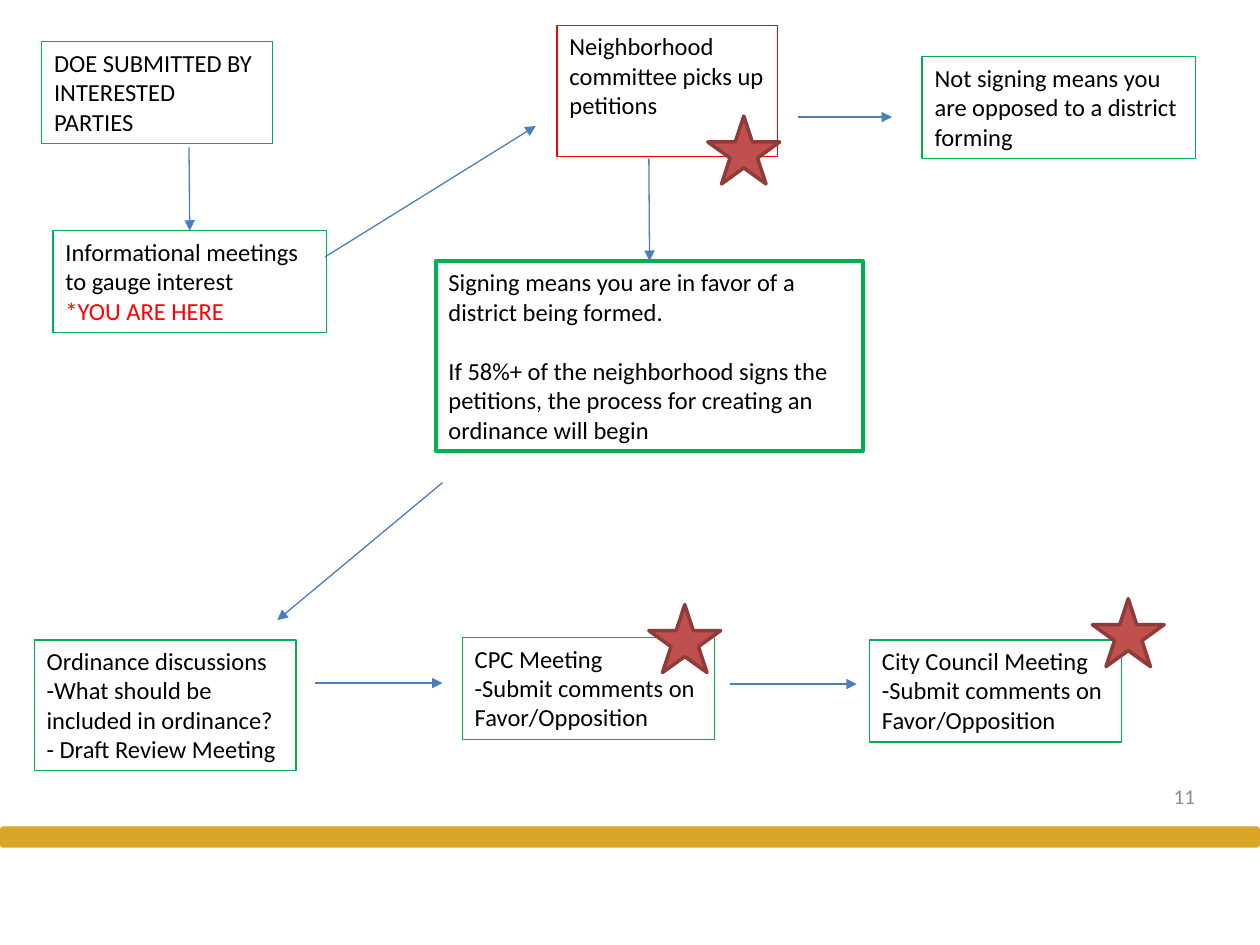
"""Build the slide showing how a neighborhood district is formed."""
from pptx import Presentation
from pptx.dml.color import RGBColor
from pptx.enum.shapes import MSO_CONNECTOR, MSO_SHAPE
from pptx.enum.text import MSO_ANCHOR, PP_ALIGN
from pptx.oxml.ns import qn
from pptx.util import Cm, Pt
from lxml.etree import SubElement

COLORS = {
    "green": "00B050", "red": "FF0000", "blue": "4B7EBC", "gold": "DAA627",
    "star": "C0504D", "star_edge": "8E3B39", "black": "000000", "gray": "8C8C8C",
}
BODY = {"name": "Calibri", "size": Pt(14)}
SMALL = {"name": "Calibri", "size": Pt(12)}
THREE_LINES, FOUR_LINES = 2.06, 2.64
STAR_SIZE = (1.45, 1.37)

BOXES = {
    "submitted": ((0.84, 0.84, 4.65, THREE_LINES), "green", 0.75,
                  [("DOE SUBMITTED BY INTERESTED PARTIES", {})]),
    "informational": ((1.07, 4.65, 5.51, THREE_LINES), "green", 0.75,
                      [("Informational meetings to gauge interest", {}),
                       ("*YOU ARE HERE", {"color": "red"})]),
    "committee": ((11.23, 0.51, 4.45, FOUR_LINES), "red", 0.75,
                  [("Neighborhood committee picks up petitions", {})]),
    "not_signing": ((18.59, 1.14, 5.51, THREE_LINES), "green", 0.75,
                    [("Not signing means you are opposed to a district forming", {})]),
    "signing": ((8.79, 5.26, 8.61, 3.84), "green", 2.25,
                [("Signing means you are in favor of a district being formed.", {}),
                 ("If 58%+ of the neighborhood signs the petitions, the process for "
                  "creating an ordinance will begin", {"space_before": 17})]),
    "ordinance": ((0.69, 12.9, 5.28, FOUR_LINES), "green", 0.75,
                  [("Ordinance discussions", {}),
                   ("-What should be included in ordinance?", {}),
                   ("- Draft Review Meeting", {})]),
    "commission": ((9.32, 12.85, 5.08, THREE_LINES), "green", 0.75,
                   [("CPC Meeting", {}),
                    ("-Submit comments on Favor/Opposition", {})]),
    "council": ((17.53, 12.9, 5.08, THREE_LINES), "green", 0.75,
                [("City Council Meeting", {}),
                 ("-Submit comments on Favor/Opposition", {})]),
}
ARROWS = [
    ((3.81, 2.97), (3.81, 4.65), "informational"),
    ((6.55, 5.18), (10.8, 2.54), None),
    ((13.08, 3.2), (13.13, 5.26), "signing"),
    ((16.08, 2.36), (17.98, 2.36), None),
    ((8.92, 9.73), (5.59, 12.5), None),
    ((6.35, 13.77), (8.92, 13.77), None),
    ((14.71, 13.79), (17.27, 13.79), None),
]
STARS = [(14.27, 2.34), (22.02, 12.07), (13.08, 12.19)]


def color(name):
    """Return the named color."""
    return RGBColor.from_string(COLORS[name])


def apply_format(target, values):
    """Set each attribute of the target from a dict."""
    for attribute, value in values.items():
        setattr(target, attribute, value)


def set_line(shape, color_name, width):
    """Give a shape or connector a solid line."""
    shape.line.color.rgb = color(color_name)
    shape.line.width = Pt(width)


def add_text(slide, bounds, paragraphs, font=BODY, text_color="black",
             alignment=PP_ALIGN.LEFT, anchor=MSO_ANCHOR.TOP):
    """Add a wrapped text box with formatted paragraphs."""
    shape = slide.shapes.add_textbox(*map(Cm, bounds))
    frame = shape.text_frame
    apply_format(frame, {"word_wrap": True, "vertical_anchor": anchor})
    for index, (text, options) in enumerate(paragraphs):
        paragraph = frame.add_paragraph() if index else frame.paragraphs[0]
        paragraph.alignment = alignment
        if "space_before" in options:
            paragraph.space_before = Pt(options["space_before"])
        run = paragraph.add_run()
        run.text = text
        apply_format(run.font, font)
        run.font.color.rgb = color(options.get("color", text_color))
    return shape


def add_box(slide, bounds, line_color, line_width, paragraphs):
    """Add an outlined step of the process."""
    shape = add_text(slide, bounds, paragraphs)
    set_line(shape, line_color, line_width)
    return shape


def add_arrow(slide, start, end, target=None):
    """Add an arrow, joined to the top of the target if there is one."""
    connector = slide.shapes.add_connector(MSO_CONNECTOR.STRAIGHT, *map(Cm, start + end))
    if target is not None:
        connector.end_connect(target, 0)
    set_line(connector, "blue", 0.75)
    properties = connector.element.spPr
    SubElement(properties.find(qn("a:ln")), qn("a:tailEnd"), type="triangle")
    SubElement(properties, qn("a:effectLst"))


def add_filled(slide, kind, bounds, fill_color):
    """Add a filled preset shape without a shadow or line."""
    shape = slide.shapes.add_shape(kind, *map(Cm, bounds))
    shape.shadow.inherit = False
    shape.fill.solid()
    shape.fill.fore_color.rgb = color(fill_color)
    shape.line.fill.background()
    return shape


def main():
    """Build and save the presentation."""
    presentation = Presentation()
    apply_format(presentation, {"slide_width": Cm(25.4), "slide_height": Cm(19.05)})
    slide = presentation.slides.add_slide(presentation.slide_layouts[6])
    add_filled(slide, MSO_SHAPE.ROUNDED_RECTANGLE, (0, 16.66, 25.4, 0.43), "gold")
    add_text(slide, (18.62, 15.54, 5.72, 1.02), [("11", {})], SMALL, "gray",
             PP_ALIGN.RIGHT, MSO_ANCHOR.MIDDLE)
    boxes = {name: add_box(slide, *values) for name, values in BOXES.items()}
    for start, end, target in ARROWS:
        add_arrow(slide, start, end, boxes.get(target))
    for position in STARS:
        star = add_filled(slide, MSO_SHAPE.STAR_5_POINT, position + STAR_SIZE, "star")
        set_line(star, "star_edge", 2)
    presentation.save("out.pptx")


if __name__ == "__main__":
    main()
